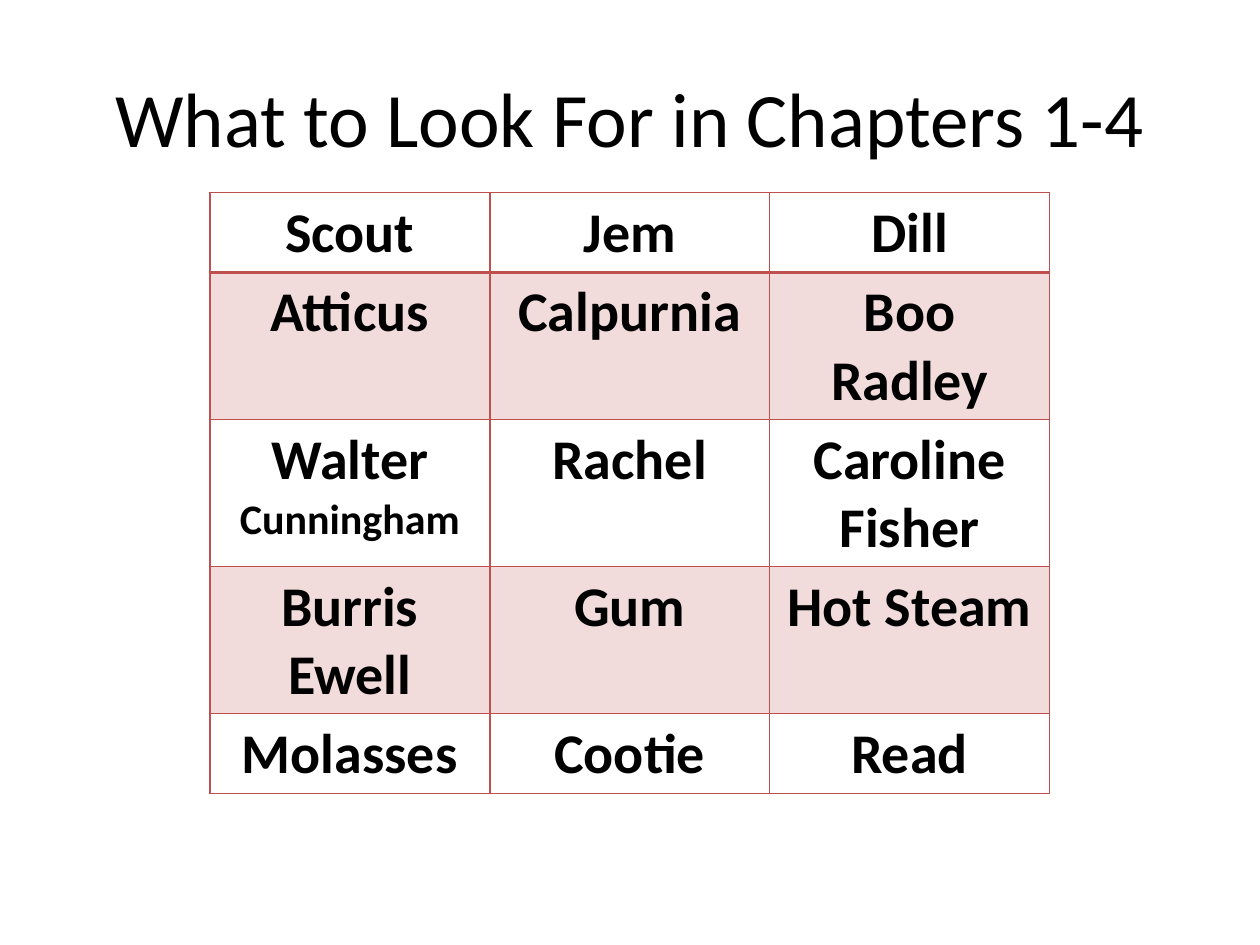
"""Build a slide with a table of names to look for in chapters 1-4."""
import lxml.etree
import pptx
import pptx.dml.color
import pptx.enum.text
import pptx.oxml.ns
import pptx.util

Cm, Pt = pptx.util.Cm, pptx.util.Pt
qn = pptx.oxml.ns.qn
hues = {"text": "000000", "red": "C0504D"}
rows = [
    ["Scout", "Jem", "Dill"],
    ["Atticus", "Calpurnia", "Boo Radley"],
    ["Walter |Cunningham", "Rachel", "Caroline Fisher"],
    ["Burris Ewell", "Gum", "Hot Steam"],
    ["Molasses", "Cootie", "Read"],
]
sizes = [32, 24]


def write(para, text, size, bold):
    para.alignment = pptx.enum.text.PP_ALIGN.CENTER
    run = para.add_run()
    run.text = text
    style = {"name": "Calibri", "size": Pt(size), "bold": bold}
    for key, value in style.items():
        setattr(run.font, key, value)
    run.font.color.rgb = pptx.dml.color.RGBColor.from_string(hues["text"])


def border(cell, side, width):
    props = cell._tc.get_or_add_tcPr()
    line = lxml.etree.SubElement(props, qn(f"a:ln{side}"), w=str(Pt(width)))
    fill = lxml.etree.SubElement(line, qn("a:solidFill"))
    lxml.etree.SubElement(fill, qn("a:srgbClr"), val=hues["red"])


deck = pptx.Presentation()
deck.slide_width, deck.slide_height = Cm(25.4), Cm(19.05)
slide = deck.slides.add_slide(deck.slide_layouts[6])

title = slide.shapes.add_textbox(Cm(1.27), Cm(0.76), Cm(22.86), Cm(3.18))
frame = title.text_frame
look = {"word_wrap": True, "vertical_anchor": pptx.enum.text.MSO_ANCHOR.MIDDLE}
for key, value in look.items():
    setattr(frame, key, value)
write(frame.paragraphs[0], "What to Look For in Chapters 1-4", 44, False)

high = Cm(1.03)
shape = slide.shapes.add_table(
    len(rows), len(rows[0]), Cm(4.23), Cm(3.88), Cm(16.93), high * len(rows))
table = shape.table
flags = {"first_row": False, "horz_banding": False}
for key, value in flags.items():
    setattr(table, key, value)

for r, names in enumerate(rows):
    table.rows[r].height = high
    for c, name in enumerate(names):
        cell = table.cell(r, c)
        for part, size in zip(name.split("|"), sizes):
            write(cell.text_frame.paragraphs[0], part, size, True)
        widths = {"L": 1, "R": 1, "T": 2 if r == 1 else 1, "B": 2 if r == 0 else 1}
        for side, width in widths.items():
            border(cell, side, width)
        if r % 2:
            cell.fill.solid()
            cell.fill.fore_color.rgb = pptx.dml.color.RGBColor.from_string(hues["red"])
            tint = cell._tc.tcPr.find(qn("a:solidFill")).find(qn("a:srgbClr"))
            lxml.etree.SubElement(tint, qn("a:alpha"), val="20000")
        else:
            cell.fill.background()

deck.save("out.pptx")
